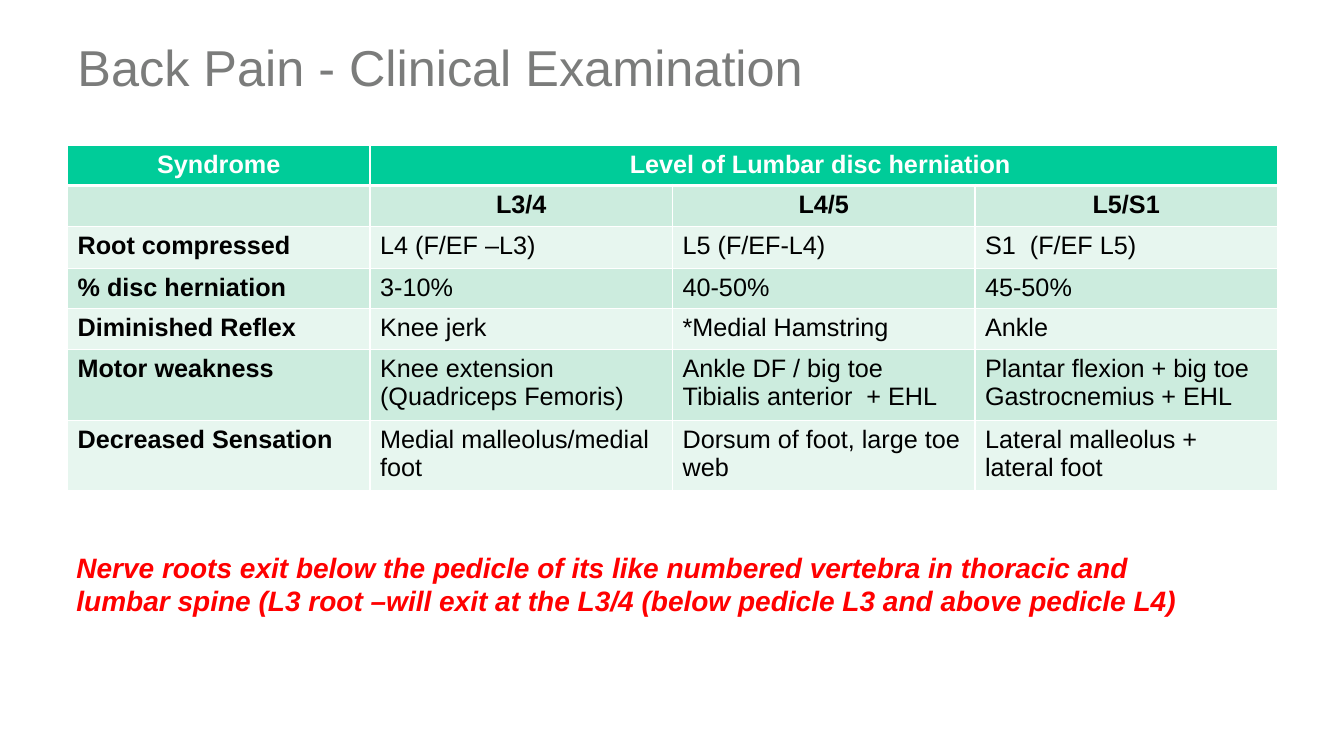
"""Build a slide with a table of lumbar disc herniation signs."""
from lxml import etree
from pptx import Presentation
from pptx.dml.color import RGBColor
from pptx.enum.text import PP_ALIGN
from pptx.oxml.ns import qn
from pptx.util import Inches, Pt

CENTER, LEFT = PP_ALIGN.CENTER, PP_ALIGN.LEFT

TITLE = "Back Pain - Clinical Examination"
NOTE = ("Nerve roots exit below the pedicle of its like numbered vertebra in thoracic and "
        "lumbar spine (L3 root –will exit at the L3/4 (below pedicle L3 and above pedicle L4)")
ROWS = [
    ["Syndrome", "Level of Lumbar disc herniation ", "", ""],
    ["", "L3/4", "L4/5", "L5/S1"],
    ["Root compressed", "L4 (F/EF –L3)", "L5 (F/EF-L4)", "S1  (F/EF L5)"],
    ["% disc herniation", "3-10%", "40-50%", "45-50%"],
    ["Diminished Reflex", "Knee jerk", "*Medial Hamstring", "Ankle"],
    ["Motor weakness", "Knee extension\n(Quadriceps Femoris)",
     "Ankle DF / big toe\nTibialis anterior  + EHL",
     "Plantar flexion + big toe\nGastrocnemius + EHL"],
    ["Decreased Sensation", "Medial malleolus/medial foot",
     "Dorsum of foot, large toe web", "Lateral malleolus + lateral foot"],
]
HEIGHTS = [0.4, 0.41, 0.41, 0.4, 0.41, 0.66, 0.66]
COL_WIDTH = 3
HEADER, BANDS = "00CC99", ("E7F6EF", "CCECDE")
WHITE, BLACK, GREY, RED = "FFFFFF", "000000", "7B7C7B", "FF0000"


def rgb(value):
    return RGBColor.from_string(value)


def write(tf, text, color, align=LEFT, **formats):
    tf.text = text
    for p in tf.paragraphs:
        p.alignment = align
        for r in p.runs:
            r.font.color.rgb = rgb(color)
            for name, value in {"name": "Arial", **formats}.items():
                setattr(r.font, name, value)


def add_text(s, box, text, color, **formats):
    tf = s.shapes.add_textbox(*map(Inches, box)).text_frame
    tf.word_wrap = True
    write(tf, text, color, **formats)
    return tf


def set_borders(cell, widths):
    tc_pr = cell._tc.get_or_add_tcPr()
    for i, (side, width) in enumerate(widths.items()):
        ln = etree.Element(qn(f"a:ln{side}"), w=str(Pt(width)))
        fill = etree.SubElement(ln, qn("a:solidFill"))
        etree.SubElement(fill, qn("a:srgbClr"), val=WHITE)
        tc_pr.insert(i, ln)


def add_signs_table(s):
    cols = len(ROWS[0])
    table = s.shapes.add_table(len(ROWS), cols, Inches(0.67), Inches(1.44),
                               Inches(COL_WIDTH * cols), Inches(sum(HEIGHTS))).table
    for col in table.columns:
        col.width = Inches(COL_WIDTH)
    for i, (row, height) in enumerate(zip(ROWS, HEIGHTS)):
        table.rows[i].height = Inches(height)
        for j, text in enumerate(row):
            cell = table.cell(i, j)
            write(cell.text_frame, text, BLACK if i else WHITE,
                  CENTER if i < 2 else LEFT, size=Pt(18), bold=i < 2 or j == 0)
            cell.fill.solid()
            cell.fill.fore_color.rgb = rgb(BANDS[i % 2] if i else HEADER)
            set_borders(cell, {"L": 1, "R": 1, "T": 3 if i == 1 else 1, "B": 1 if i else 3})
    table.cell(0, 1).merge(table.cell(0, cols - 1))


def main():
    prs = Presentation()
    prs.slide_width, prs.slide_height = Inches(13.33), Inches(7.5)
    s = prs.slides.add_slide(prs.slide_layouts[6])
    title = add_text(s, (0.67, 0.3, 11.99, 0.99), TITLE, GREY, size=Pt(36))
    title.paragraphs[0].line_spacing = 1.02
    add_signs_table(s)
    add_text(s, (0.66, 5.41, 11.5, 0.77), NOTE, RED, size=Pt(20), bold=True, italic=True)
    prs.save("out.pptx")


if __name__ == "__main__":
    main()
